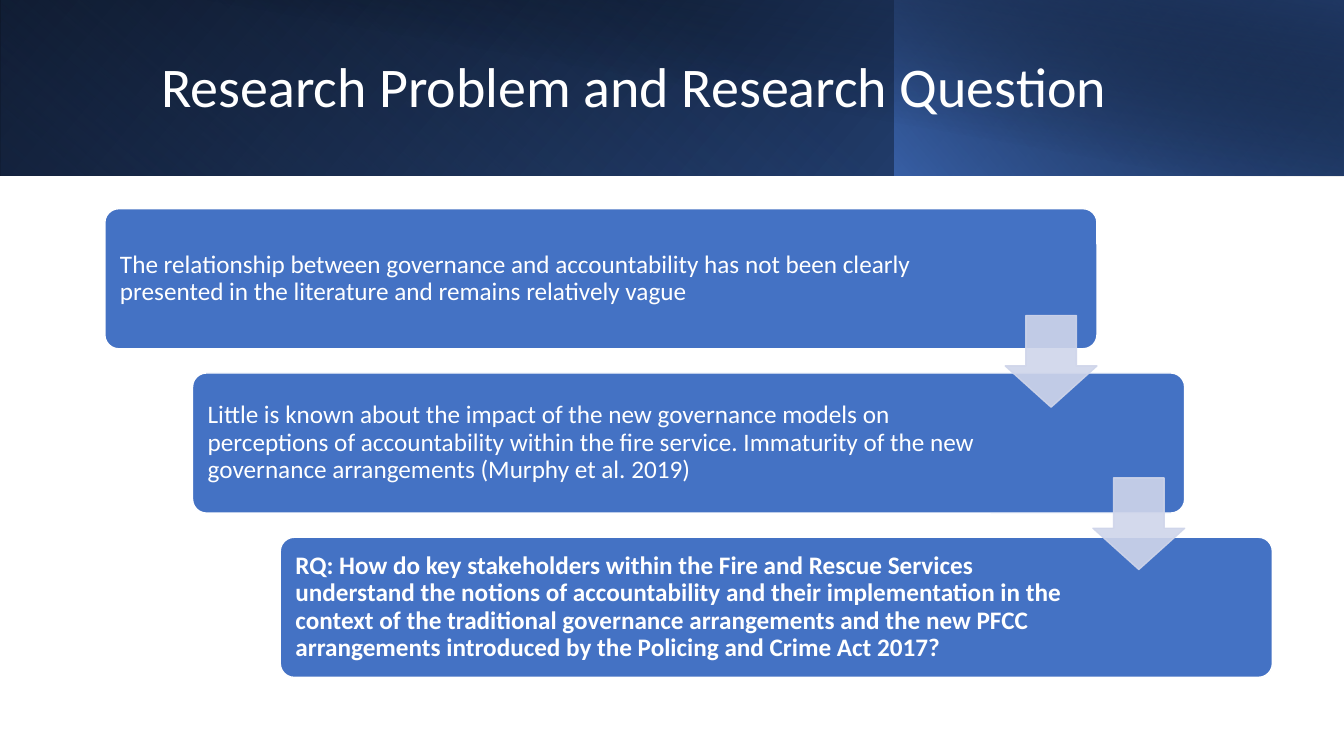
from lxml import etree
from pptx import Presentation
from pptx.dml.color import RGBColor
from pptx.enum.shapes import MSO_SHAPE
from pptx.enum.text import MSO_ANCHOR, MSO_AUTO_SIZE, PP_ALIGN
from pptx.oxml.ns import qn
from pptx.util import Inches, Pt

RECTANGLE = MSO_SHAPE.RECTANGLE
ROUNDED = MSO_SHAPE.ROUNDED_RECTANGLE
DOWN_ARROW = MSO_SHAPE.DOWN_ARROW
MIDDLE = MSO_ANCHOR.MIDDLE
LEFT = PP_ALIGN.LEFT
NO_AUTOFIT = MSO_AUTO_SIZE.NONE

THEME = {
    "font": "Calibri",
    "title": Pt(40),
    "body": Pt(18),
    "outline": Pt(1),
    "white": RGBColor.from_string("FFFFFF"),
    "black": RGBColor.from_string("000000"),
    "blue": RGBColor.from_string("4472C4"),
    "deep_blue": RGBColor.from_string("2F5597"),
    "navy": RGBColor.from_string("203864"),
    "arrow": RGBColor.from_string("CFD5EA"),
}

deck = Presentation()
deck.slide_width, deck.slide_height = Inches(13.33), Inches(7.5)
slide = deck.slides.add_slide(deck.slide_layouts[5])


def add_plain_shape(kind, left, top, width, height):
    shape = slide.shapes.add_shape(kind, Inches(left), Inches(top), Inches(width), Inches(height))
    shape.shadow.inherit = False
    return shape


def write_text(shape, text, size, bold, insets):
    frame = shape.text_frame
    frame.text = text
    settings = {"word_wrap": True, "auto_size": NO_AUTOFIT, "vertical_anchor": MIDDLE}
    for side, inset in zip(("left", "top", "right", "bottom"), insets):
        settings[f"margin_{side}"] = Inches(inset)
    for name, value in settings.items():
        setattr(frame, name, value)
    para = frame.paragraphs[0]
    para.alignment = LEFT
    para.line_spacing = 0.9
    for name, value in {"name": THEME["font"], "size": size, "bold": bold}.items():
        setattr(para.runs[0].font, name, value)
    para.runs[0].font.color.rgb = THEME["white"]


banner_layers = [
    ((0, 0, 13.33, 1.74), 0, True, 140, [(0, "black", 100), (1, "deep_blue", 100)]),
    ((0, 0, 8.88, 1.74), 180, True, 230, [(0.2, "blue", 0), (1, "navy", 55)]),
    ((8.87, 0, 4.46, 1.74), 0, True, 220, [(0, "blue", 66), (1, "black", 30)]),
    ((0.5, 0, 12.83, 1.75), 0, False, 280, [(0.5, "black", 0), (0.99, "navy", 52)]),
]
for bounds, rotation, flipped, angle, stops in banner_layers:
    layer = add_plain_shape(RECTANGLE, *bounds)
    layer.rotation = rotation
    layer.line.fill.background()
    layer.fill.gradient()
    layer.fill.gradient_angle = 360 - angle
    for stop, (position, color, opacity) in zip(layer.fill.gradient_stops, stops):
        stop.position = position
        stop.color.rgb = THEME[color]
    properties = layer._element.spPr
    if flipped:
        properties.find(qn("a:xfrm")).set("flipH", "1")
    for color_node, (position, color, opacity) in zip(properties.iter(qn("a:srgbClr")), stops):
        etree.SubElement(color_node, qn("a:alpha")).set("val", str(opacity * 1000))

title = slide.shapes.title
title.left, title.top, title.width, title.height = (Inches(n) for n in (1.5, 0.32, 10.82, 1.13))
write_text(title, "Research Problem and Research Question", THEME["title"], False, (0.1, 0.05, 0.1, 0.05))
slide.shapes._spTree.append(title._element)

steps = [
    ("The relationship between governance and accountability has not been clearly presented "
     "in the literature and remains relatively vague", False, 1.54),
    ("Little is known about the impact of the new governance models on perceptions of "
     "accountability within the fire service. Immaturity of the new governance arrangements "
     "(Murphy et al. 2019)", False, 1.89),
    ("RQ: How do key stakeholders within the Fire and Rescue Services understand the notions "
     "of accountability and their implementation in the context of the traditional governance "
     "arrangements and the new PFCC arrangements introduced by the Policing and Crime Act 2017?",
     True, 1.89),
]
STEP_RIGHT = 0.87
for index, (text, bold, right_inset) in enumerate(steps):
    box = add_plain_shape(ROUNDED, 1.04 + index * STEP_RIGHT, 2.07 + index * 1.63, 9.84, 1.39)
    box.adjustments[0] = 0.1
    box.fill.solid()
    box.fill.fore_color.rgb = THEME["blue"]
    box.line.color.rgb = THEME["white"]
    box.line.width = THEME["outline"]
    write_text(box, text, THEME["body"], bold, (0.11, 0.11, right_inset, 0.11))

for index in range(len(steps) - 1):
    arrow = add_plain_shape(DOWN_ARROW, 9.97 + index * STEP_RIGHT, 3.13 + index * 1.61, 0.91, 0.91)
    arrow.adjustments[0], arrow.adjustments[1] = 0.55, 0.45
    arrow.fill.solid()
    arrow.fill.fore_color.rgb = THEME["arrow"]
    arrow.line.color.rgb = THEME["arrow"]
    arrow.line.width = THEME["outline"]
    for color_node in arrow._element.spPr.iter(qn("a:srgbClr")):
        etree.SubElement(color_node, qn("a:alpha")).set("val", "90000")

deck.save("out.pptx")
